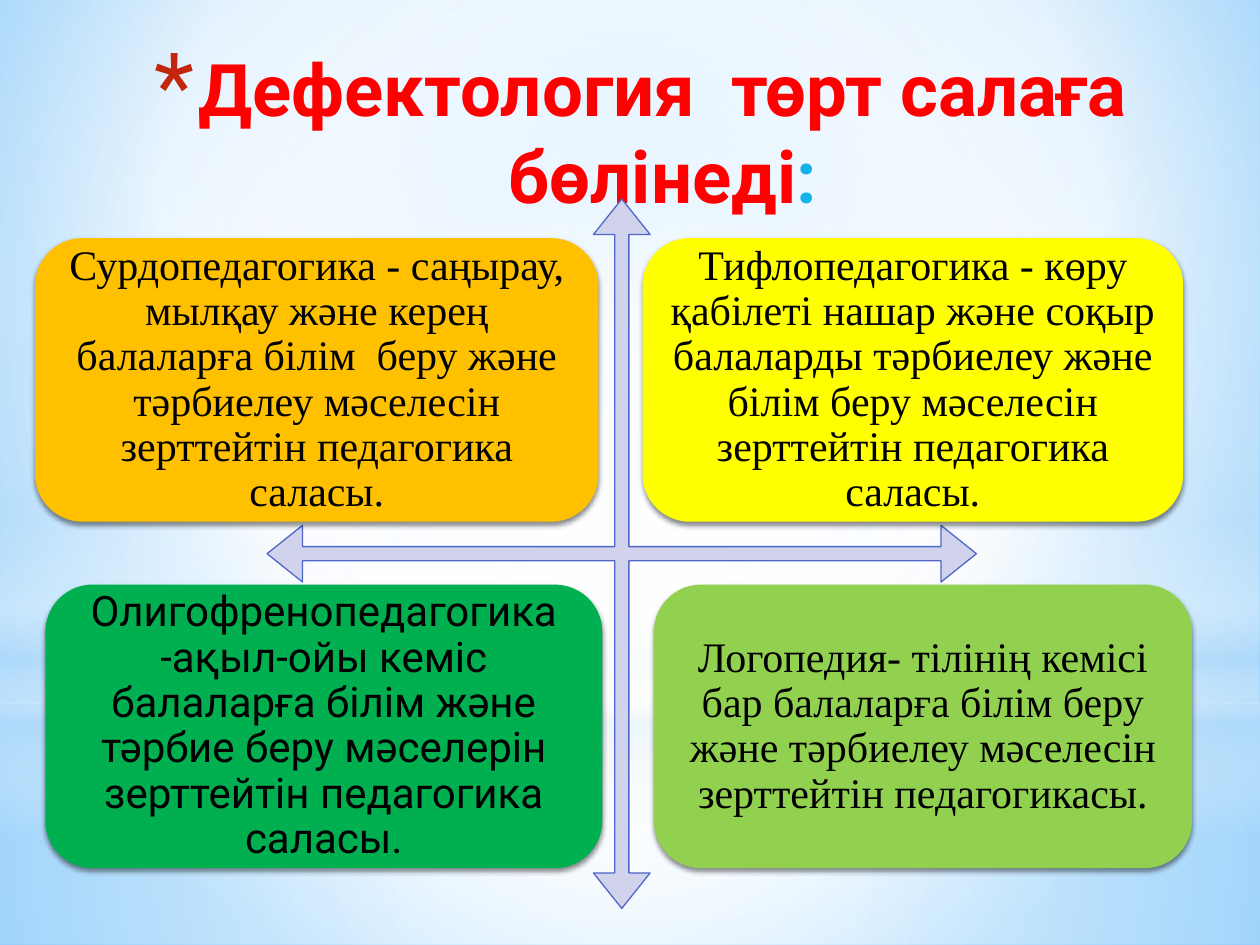
from pptx import Presentation
from pptx.dml.color import RGBColor
from pptx.enum.shapes import MSO_SHAPE
from pptx.enum.text import MSO_ANCHOR, MSO_AUTO_SIZE, PP_ALIGN
from pptx.oxml import parse_xml
from pptx.oxml.ns import nsdecls, qn
from pptx.util import Inches, Pt

RECT, OVAL = MSO_SHAPE.RECTANGLE, MSO_SHAPE.OVAL
ROUND, QUAD = MSO_SHAPE.ROUNDED_RECTANGLE, MSO_SHAPE.QUAD_ARROW
TOP, MIDDLE = MSO_ANCHOR.TOP, MSO_ANCHOR.MIDDLE
CENTER, NO_FIT = PP_ALIGN.CENTER, MSO_AUTO_SIZE.NONE

BLACK = RGBColor(0x00, 0x00, 0x00)
RED = RGBColor(0xFF, 0x00, 0x00)
CYAN = RGBColor(0x12, 0xB2, 0xEB)
LILAC = RGBColor(0xD0, 0xD3, 0xEB)
BLUE = RGBColor(0x4E, 0x67, 0xC8)
ORANGE = RGBColor(0xFF, 0xC0, 0x00)
YELLOW = RGBColor(0xFF, 0xFF, 0x00)
GREEN = RGBColor(0x00, 0xB0, 0x50)
LIME = RGBColor(0x92, 0xD0, 0x50)
WHITE = RGBColor(0xFF, 0xFF, 0xFF)
PALE = RGBColor(0xB4, 0xDC, 0xFA)
SKY = RGBColor(0x9E, 0xD5, 0xFF)
AZURE = RGBColor(0x5B, 0xB9, 0xFF)

SANS, SERIF = "Roboto", "Times New Roman"
MID = (50, 50, 50, 50)


def shade(owner, stops, focus=None):
    marks = "".join(
        f'<a:gs pos="{pos * 1000}"><a:srgbClr val="{color}">'
        f'<a:alpha val="{alpha * 1000}"/></a:srgbClr></a:gs>'
        for pos, color, alpha in stops)
    if focus:
        l, t, r, b = (side * 1000 for side in focus)
        way = (f'<a:path path="circle"><a:fillToRect l="{l}" t="{t}" '
               f'r="{r}" b="{b}"/></a:path>')
    else:
        way = '<a:lin ang="5400000" scaled="0"/>'
    owner.replace(owner.find(qn("a:solidFill")), parse_xml(
        f'<a:gradFill {nsdecls("a")} rotWithShape="1">'
        f'<a:gsLst>{marks}</a:gsLst>{way}</a:gradFill>'))


def place(kind, box, color):
    shape = slide.shapes.add_shape(kind, *(Inches(v) for v in box))
    shape.shadow.inherit = False
    shape.fill.solid()
    shape.fill.fore_color.rgb = color
    shape.line.fill.background()
    return shape


prs = Presentation()
prs.slide_width, prs.slide_height = Inches(10), Inches(7.5)
slide = prs.slides.add_slide(prs.slide_layouts[5])

slide.background.fill.solid()
shade(slide.element.find(".//" + qn("p:bgPr")),
      [(0, SKY, 100), (60, WHITE, 100), (100, AZURE, 100)],
      (20, 10, 20, 60))

glows = [
    (RECT, (0, 5.58, 10, 1.92), MID,
     [(0, WHITE, 91), (37, WHITE, 76), (100, PALE, 79)]),
    (RECT, (0, 0, 10, 5.58), MID,
     [(0, WHITE, 89), (48, WHITE, 62), (100, PALE, 79)]),
    (RECT, (0, 4.12, 10, 2.5), None,
     [(0, WHITE, 0), (29, WHITE, 30), (45, PALE, 40),
      (55, WHITE, 26), (65, PALE, 60), (100, WHITE, 0)]),
    (OVAL, (0, 1.75, 10, 5.58), MID,
     [(0, WHITE, 100), (56, WHITE, 0)]),
]
for kind, box, focus, stops in glows:
    glow = place(kind, box, WHITE)
    shade(glow.element.spPr, stops, focus)

title = slide.shapes.title
slide.shapes.element.append(title.element)
title.left, title.top = Inches(0.67), Inches(0.3)
title.width, title.height = Inches(8.83), Inches(1.25)
frame = title.text_frame
frame.word_wrap = True
frame.auto_size = NO_FIT
frame.vertical_anchor = TOP
para = frame.paragraphs[0]
para.alignment = CENTER
para.font.name, para.font.size, para.font.bold = SANS, Pt(41.4), True
for words, color in (("Дефектология\u00a0 төрт салаға бөлінеді", RED),
                     (":", CYAN)):
    run = para.add_run()
    run.text = words
    run.font.name, run.font.size, run.font.bold = SANS, Pt(41.4), True
    run.font.color.rgb = color
props = para._p.get_or_add_pPr()
props.set("marL", str(Inches(0.35)))
props.set("indent", str(Inches(-0.35)))
bullet = parse_xml(
    f'<a:pPr {nsdecls("a")}><a:buClr><a:srgbClr val="C3260C"/></a:buClr>'
    '<a:buSzPct val="128000"/><a:buFont typeface="Roboto"/>'
    '<a:buChar char="*"/></a:pPr>')
for spot, part in enumerate(list(bullet)):
    props.insert(spot, part)

cross = place(QUAD, (2.12, 1.58, 5.63, 5.63), LILAC)
cross.line.color.rgb = BLUE
cross.line.width = Pt(0.75)
for spot, value in enumerate((0.02, 0.04, 0.05)):
    cross.adjustments[spot] = value

cards = [
    (0.28, 1.89, 4.47, ORANGE, SERIF,
     "Сурдопедагогика - саңырау, мылқау және керең балаларға білім\u00a0 беру "
     "және тәрбиелеу мәселесін зерттейтін педагогика саласы."),
    (5.1, 1.89, 4.29, YELLOW, SERIF,
     "Тифлопедагогика - көру қабілеті нашар және соқыр балаларды тәрбиелеу "
     "және білім беру мәселесін зерттейтін педагогика саласы."),
    (0.36, 4.64, 4.42, GREEN, SANS,
     "Олигофренопедагогика -ақыл-ойы кеміс балаларға білім және тәрбие беру "
     "мәселерін зерттейтін педагогика саласы."),
    (5.19, 4.64, 4.27, LIME, SERIF,
     "Логопедия- тілінің кемісі бар балаларға білім беру және тәрбиелеу "
     "мәселесін зерттейтін педагогикасы."),
]
for left, top, width, color, font, words in cards:
    card = place(ROUND, (left, top, width, 2.25), color)
    card.element.spPr.find(qn("a:effectLst")).append(parse_xml(
        f'<a:outerShdw {nsdecls("a")} blurRad="{Pt(3.1)}" dist="{Pt(1.8)}" '
        'dir="5400000" rotWithShape="0"><a:srgbClr val="000000">'
        '<a:alpha val="45000"/></a:srgbClr></a:outerShdw>'))
    frame = card.text_frame
    frame.word_wrap = True
    frame.vertical_anchor = MIDDLE
    frame.margin_left = frame.margin_right = Inches(0.1)
    frame.margin_top = frame.margin_bottom = Inches(0.1)
    para = frame.paragraphs[0]
    para.text = words
    para.alignment = CENTER
    para.line_spacing = 0.9
    para.font.name, para.font.size = font, Pt(24)
    para.font.color.rgb = BLACK

prs.save("out.pptx")
